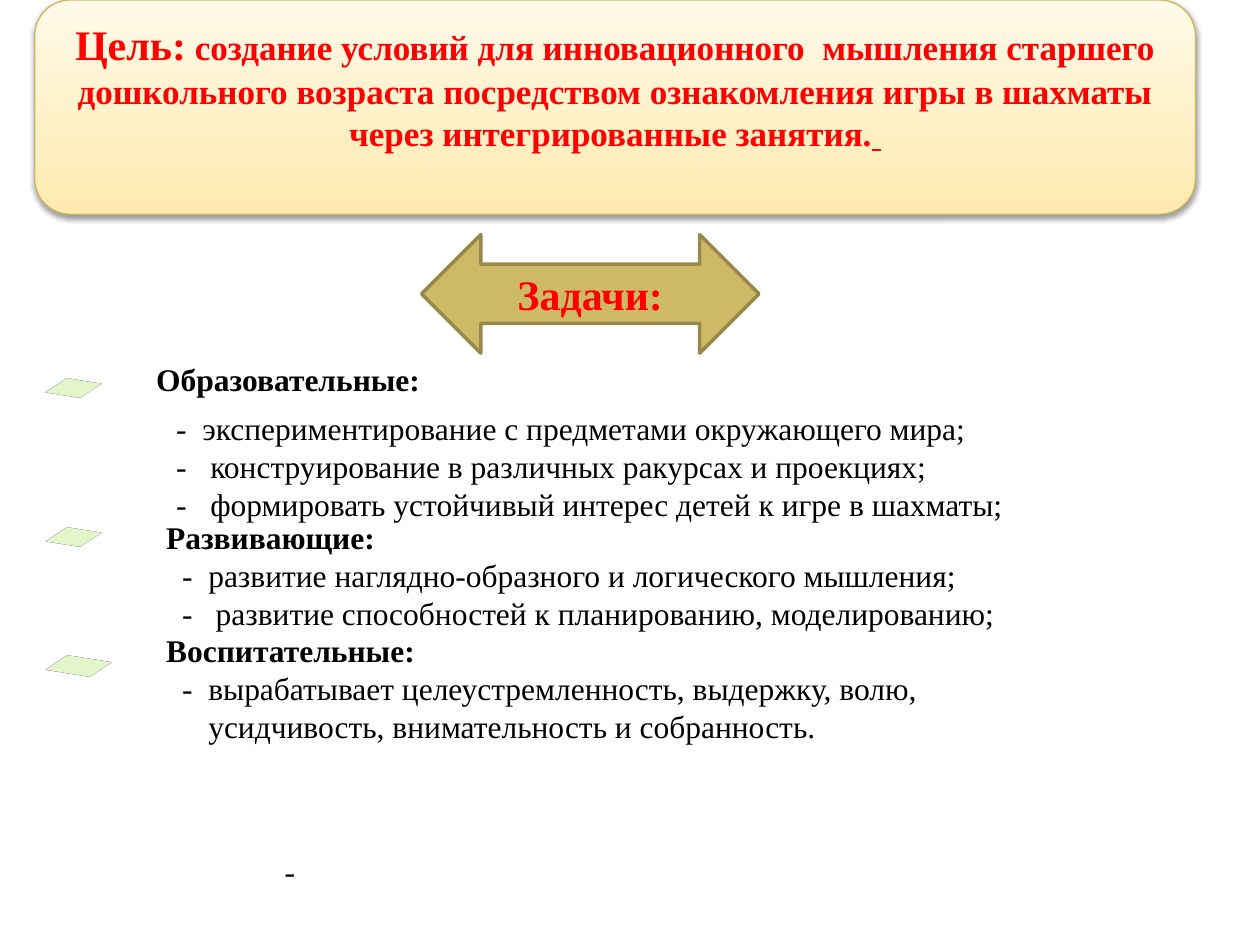
from lxml.etree import SubElement
from pptx import Presentation
from pptx.dml.color import RGBColor
from pptx.enum.shapes import MSO_SHAPE
from pptx.enum.text import MSO_ANCHOR, PP_ALIGN
from pptx.oxml.ns import qn
from pptx.util import Cm, Pt

FONT = "Times New Roman"
RED = "FF0000"


def rgb(value):
    return RGBColor.from_string(value)


def style_font(font, size, color, bold=False):
    font.name = FONT
    font.size = Pt(size)
    font.bold = bold
    font.color.rgb = rgb(color)


def paint(sp, fill, line, width):
    sp.fill.solid()
    sp.fill.fore_color.rgb = rgb(fill)
    sp.line.color.rgb = rgb(line)
    sp.line.width = Pt(width)
    sp.shadow.inherit = False


def add_soft_shadow(sp):
    sp.shadow.inherit = False
    effects = sp._element.spPr.find(qn("a:effectLst"))
    shadow = SubElement(effects, qn("a:outerShdw"), blurRad=str(Pt(3.1)),
                        dist=str(Pt(1.6)), dir="5400000", rotWithShape="0")
    color = SubElement(shadow, qn("a:srgbClr"), val="000000")
    SubElement(color, qn("a:alpha"), val="38000")


def add_goal(s, x, y, w, h):
    sp = s.shapes.add_shape(MSO_SHAPE.ROUNDED_RECTANGLE, Cm(x), Cm(y), Cm(w), Cm(h))
    sp.fill.gradient()
    sp.fill.gradient_angle = 90
    for stop, (position, color) in zip(sp.fill.gradient_stops, [(0, "FFEBAF"), (1, "FFF9E9")]):
        stop.position = position
        stop.color.rgb = rgb(color)
    sp.line.color.rgb = rgb("CCB661")
    sp.line.width = Pt(0.75)
    add_soft_shadow(sp)
    tf = sp.text_frame
    tf.word_wrap = True
    tf.vertical_anchor = MSO_ANCHOR.MIDDLE
    tf.margin_bottom = Cm(0.97)
    p = tf.paragraphs[0]
    p.alignment = PP_ALIGN.CENTER
    for text, size in [
        ("Цель:", 24),
        (" создание условий для инновационного  мышления старшего дошкольного возраста "
         "посредством ознакомления игры в шахматы через интегрированные занятия.", 20),
        (" ", 20),
    ]:
        r = p.add_run()
        r.text = text
        style_font(r.font, size, RED, True)
    r.font.underline = True


def add_tasks_arrow(s, x, y, w, h):
    sp = s.shapes.add_shape(MSO_SHAPE.LEFT_RIGHT_ARROW, Cm(x), Cm(y), Cm(w), Cm(h))
    paint(sp, "CEB966", "98894B", 2)
    sp.text_frame.vertical_anchor = MSO_ANCHOR.MIDDLE
    p = sp.text_frame.paragraphs[0]
    p.text = "Задачи:"
    p.alignment = PP_ALIGN.CENTER
    style_font(p.font, 24, RED, True)


def add_marker(s, x, y, w, h):
    sp = s.shapes.add_shape(MSO_SHAPE.RECTANGLE, Cm(x), Cm(y), Cm(w), Cm(h))
    paint(sp, "9CB084", "98894B", 2)
    scene = SubElement(sp._element.spPr, qn("a:scene3d"))
    SubElement(scene, qn("a:camera"), prst="isometricOffAxis2Top")
    SubElement(scene, qn("a:lightRig"), rig="threePt", dir="t")


def add_text(s, x, y, w, h, items, wrap=True):
    tf = s.shapes.add_textbox(Cm(x), Cm(y), Cm(w), Cm(h)).text_frame
    tf.word_wrap = wrap
    for i, (text, dash, margin) in enumerate(items):
        p = tf.add_paragraph() if i else tf.paragraphs[0]
        p.text = text
        pPr = p._p.get_or_add_pPr()
        pPr.set("marL", str(Cm(margin)))
        pPr.set("indent", str(Cm(dash) - Cm(margin)))
        style_font(p.font, 18, "000000", text.endswith(":"))


def main():
    prs = Presentation()
    prs.slide_width, prs.slide_height = Cm(25.4), Cm(19.05)
    s = prs.slides.add_slide(prs.slide_layouts[6])
    add_goal(s, 0.7, 0, 23.4, 4.32)
    add_text(s, 3.1, 10.32, 18.39, 6.4, [
        ("Развивающие:", 0, 0),
        ("-\tразвитие наглядно-образного и логического мышления;", 0.32, 0.85),
        ("-\tразвитие способностей к планированию, моделированию;", 0.32, 1),
        ("Воспитательные:", 0, 0),
        ("-\tвырабатывает целеустремленность, выдержку, волю, усидчивость, "
         "внимательность и собранность.", 0.32, 0.85),
    ])
    add_tasks_arrow(s, 8.5, 4.73, 6.8, 2.39)
    for y, w in [(7.32, 0.79), (10.32, 0.79), (12.93, 1)]:
        add_marker(s, 1.09, y, w, 1)
    add_text(s, 2.9, 7.14, 18.59, 1.02, [("Образовательные:", 0, 0)])
    add_text(s, 3.3, 8.13, 20.8, 4.7, [
        ("-\tэкспериментирование с предметами окружающего мира;", 0, 0.53),
        ("-\tконструирование в различных ракурсах и проекциях;", 0, 0.69),
        ("-\tформировать устойчивый интерес детей к игре в шахматы;", 0, 0.69),
    ])
    add_text(s, 5.49, 17.06, 0.74, 1.02, [("-", 0, 0)], wrap=False)
    prs.save("out.pptx")


if __name__ == "__main__":
    main()
